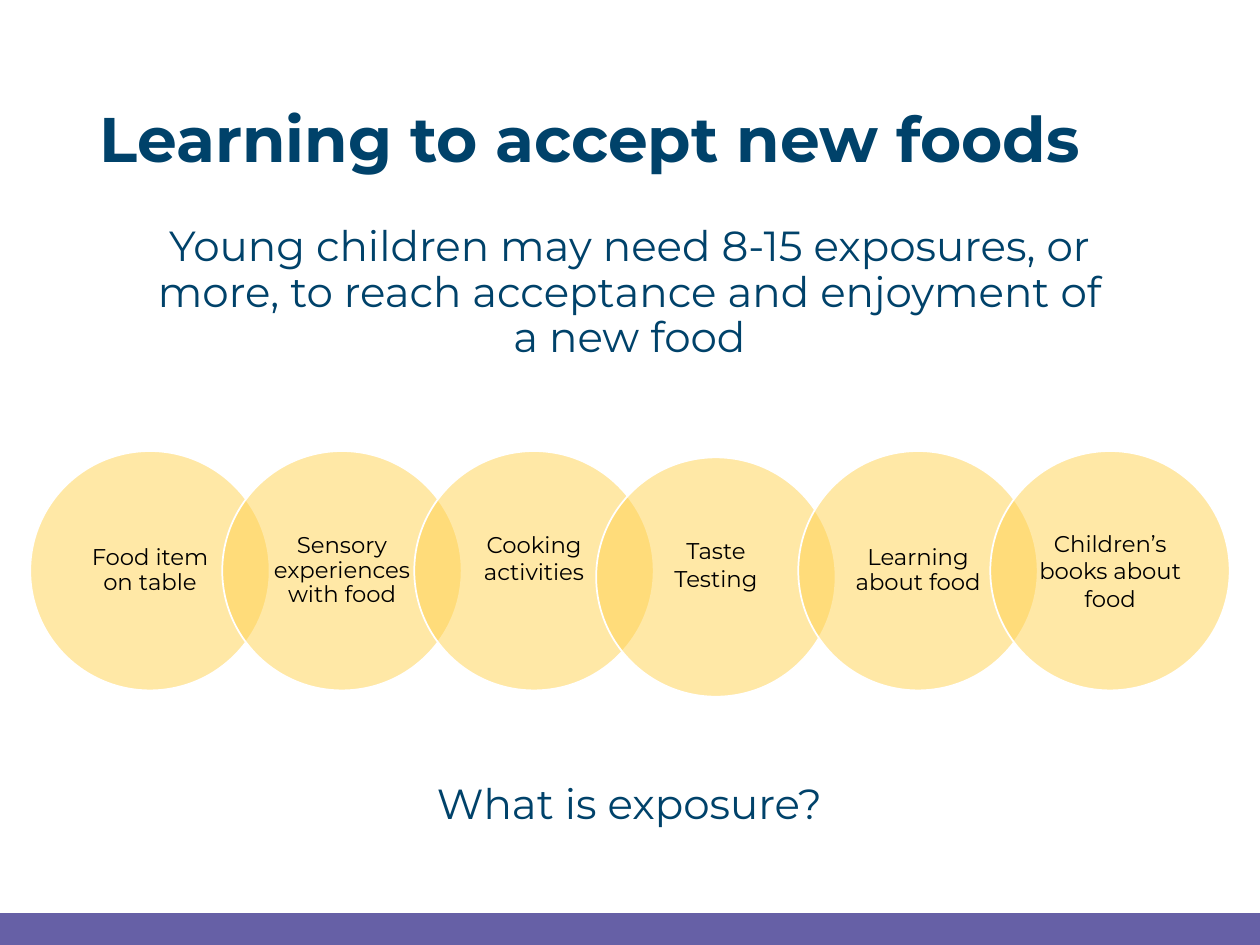
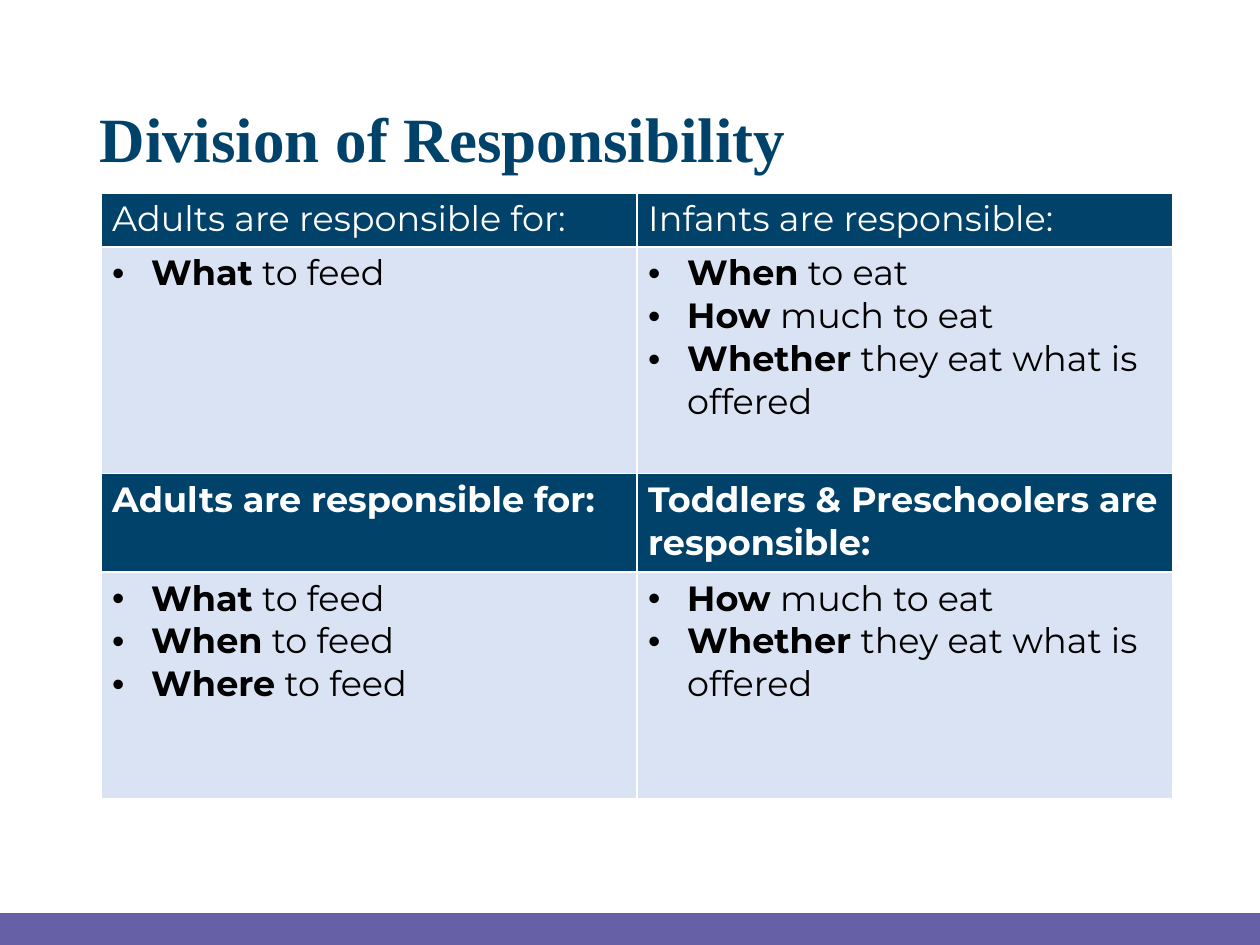
from dataclasses import dataclass

from lxml import etree
from pptx import Presentation
from pptx.dml.color import RGBColor
from pptx.enum.shapes import MSO_SHAPE
from pptx.enum.text import MSO_ANCHOR, MSO_AUTO_SIZE, PP_ALIGN
from pptx.oxml.ns import qn
from pptx.util import Inches, Pt

OVAL, RECTANGLE = MSO_SHAPE.OVAL, MSO_SHAPE.RECTANGLE
TOP, MIDDLE = MSO_ANCHOR.TOP, MSO_ANCHOR.MIDDLE
LEFT, CENTER = PP_ALIGN.LEFT, PP_ALIGN.CENTER
NO_FIT = MSO_AUTO_SIZE.NONE


@dataclass(frozen=True)
class Theme:
    navy: str = "00426A"
    purple: str = "6660A6"
    yellow: str = "FFD24F"
    pale_blue: str = "DAE3F3"
    white: str = "FFFFFF"
    black: str = "000000"
    font: str = "Montserrat"
    serif: str = "Times New Roman"
    title_size: float = 36
    body_size: float = 24
    table_size: float = 20
    circle_size: float = 13
    tight: float = 0.9


THEME = Theme()

EXPOSURES = [
    ("Food item on table", THEME.tight, 0, (0, 0)),
    ("Sensory experiences with food", THEME.tight, 0, (0, 0)),
    ("Cooking activities", 1, -0.1, (0, 0)),
    ("Taste Testing", 1, -0.1, (-0.08, 0.05)),
    ("Learning about food", THEME.tight, 0, (0, 0)),
    ("Children’s books about food", 1, 0, (0, 0)),
]

RESPONSIBILITIES = [
    (0.43, False, "Adults are responsible for:", "Infants are responsible:"),
    (1.8, False, ["What to feed"],
     ["When to eat", "How much to eat", "Whether they eat what is offered"]),
    (0.78, True, "Adults are responsible for:",
     "Toddlers & Preschoolers are responsible:"),
    (1.8, False, ["What to feed", "When to feed", "Where to feed"],
     ["How much to eat", "Whether they eat what is offered"]),
]


def rgb(value):
    return RGBColor.from_string(value)


def add_text(para, text, size, color, font=THEME.font, bold=False,
             align=LEFT, spacing=1):
    para.alignment = align
    para.line_spacing = spacing
    span = para.add_run()
    span.text = text
    span.font.name = font
    span.font.size = Pt(size)
    span.font.bold = bold
    span.font.color.rgb = rgb(color)


def add_bullet(para, text, indent=0.31):
    properties = para._p.get_or_add_pPr()
    properties.set("marL", str(Inches(indent)))
    properties.set("indent", str(-Inches(indent)))
    etree.SubElement(properties, qn("a:buFont")).set("typeface", "Arial")
    etree.SubElement(properties, qn("a:buChar")).set("char", "•")
    keyword, gap, rest = text.partition(" ")
    add_text(para, keyword, THEME.table_size, THEME.black, bold=True)
    add_text(para, gap + rest, THEME.table_size, THEME.black)


def add_box(page, bounds, text, inset=0.05, anchor=TOP, **text_format):
    box = page.shapes.add_textbox(*map(Inches, bounds))
    frame = box.text_frame
    frame.word_wrap = True
    frame.vertical_anchor = anchor
    frame.margin_top = frame.margin_bottom = Inches(inset)
    add_text(frame.paragraphs[0], text, align=CENTER, **text_format)


def add_shape(page, kind, bounds, fill, line, opacity=None):
    shape = page.shapes.add_shape(kind, *map(Inches, bounds))
    shape.shadow.inherit = False
    shape.fill.solid()
    shape.fill.fore_color.rgb = rgb(fill)
    shape.line.color.rgb = rgb(line)
    shape.line.width = Pt(1)
    if opacity is not None:
        color = shape.element.spPr.find(qn("a:solidFill"))[0]
        etree.SubElement(color, qn("a:alpha")).set("val", str(opacity * 1000))


def add_page(deck, title, font=THEME.font):
    page = deck.slides.add_slide(deck.slide_layouts.get_by_name("Title Only"))
    add_shape(page, RECTANGLE, (0, 7.25, 10, 0.25), THEME.purple, THEME.purple)
    heading = page.shapes.title
    heading.left, heading.top, heading.width, heading.height = map(
        Inches, (0.69, 0.4, 8.62, 1.45))
    frame = heading.text_frame
    frame.auto_size = NO_FIT
    frame.vertical_anchor = MIDDLE
    add_text(frame.paragraphs[0], title, THEME.title_size, THEME.navy,
             font=font, bold=True, spacing=THEME.tight)
    return page


def add_circle_chain(page, left, top, width, diameter=1.9, inset=0.28):
    pitch = (width - diameter) / (len(EXPOSURES) - 1)
    side = diameter - 2 * inset
    for index, (caption, spacing, lift, (shift_x, shift_y)) in enumerate(EXPOSURES):
        x = left + index * pitch + shift_x
        y = top + shift_y
        add_shape(page, OVAL, (x, y, diameter, diameter),
                  THEME.yellow, THEME.white, opacity=50)
        add_box(page, (x + inset, y + inset + lift, side, side), caption,
                inset=0.02, anchor=MIDDLE, size=THEME.circle_size,
                color=THEME.black, spacing=spacing)


def add_cell_borders(cell):
    properties = cell._tc.get_or_add_tcPr()
    for side in ("lnL", "lnR", "lnT", "lnB"):
        line = etree.SubElement(properties, qn(f"a:{side}"))
        line.set("w", str(Pt(1)))
        fill = etree.SubElement(line, qn("a:solidFill"))
        etree.SubElement(fill, qn("a:srgbClr")).set("val", THEME.white)


def fill_cell(cell, content, bold):
    is_header = isinstance(content, str)
    add_cell_borders(cell)
    cell.fill.solid()
    cell.fill.fore_color.rgb = rgb(THEME.navy if is_header else THEME.pale_blue)
    cell.margin_left = cell.margin_right = Inches(0.09)
    cell.margin_top = cell.margin_bottom = Inches(0.04)
    frame = cell.text_frame
    if is_header:
        add_text(frame.paragraphs[0], content, THEME.table_size, THEME.white,
                 bold=bold)
        return
    for index, item in enumerate(content):
        para = frame.add_paragraph() if index else frame.paragraphs[0]
        add_bullet(para, item)


def add_responsibility_table(page, left, top, width):
    height = sum(row[0] for row in RESPONSIBILITIES)
    table = page.shapes.add_table(
        len(RESPONSIBILITIES), 2,
        *map(Inches, (left, top, width, height))).table
    table.first_row = table.horz_banding = False
    for column in table.columns:
        column.width = Inches(width / 2)
    for row, (row_height, bold, *contents) in enumerate(RESPONSIBILITIES):
        table.rows[row].height = Inches(row_height)
        for column, content in enumerate(contents):
            fill_cell(table.cell(row, column), content, bold)


def build_exposure_page(deck):
    page = add_page(deck, "Learning to accept new foods")
    body = dict(size=THEME.body_size, color=THEME.navy, spacing=THEME.tight)
    add_box(page, (1.12, 1.74, 7.75, 1.2),
            "Young children may need 8-15 exposures, or more, "
            "to reach acceptance and enjoyment of a new food", **body)
    add_circle_chain(page, 0.24, 3.58, 9.52)
    add_box(page, (1.12, 6.17, 7.75, 0.5), "What is exposure?", **body)


def build_responsibility_page(deck):
    page = add_page(deck, "Division of Responsibility", font=THEME.serif)
    add_responsibility_table(page, 0.8, 1.53, 8.51)


def main():
    deck = Presentation()
    deck.slide_width, deck.slide_height = Inches(10), Inches(7.5)
    build_exposure_page(deck)
    build_responsibility_page(deck)
    deck.save("out.pptx")


if __name__ == "__main__":
    main()
